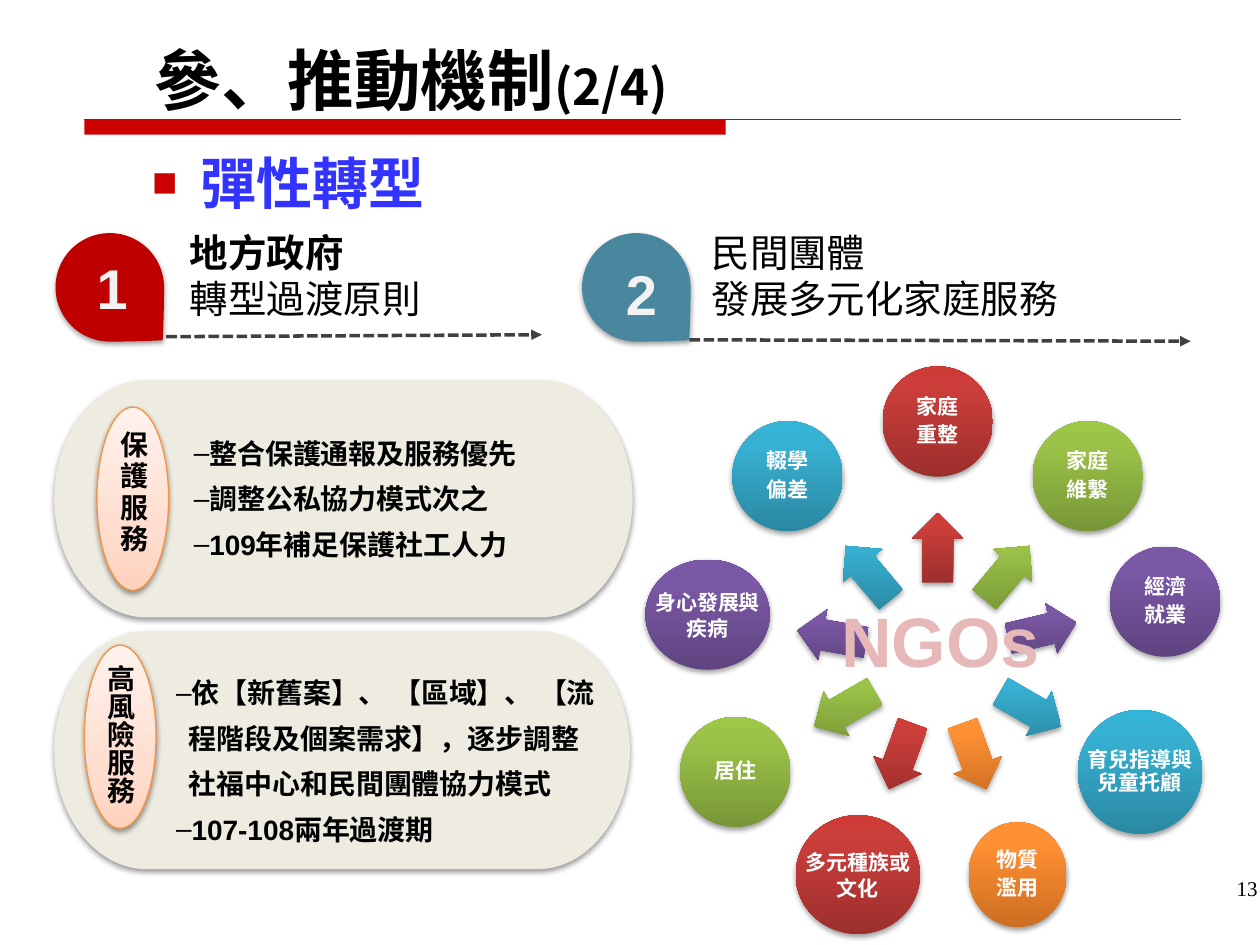
import math

import pptx
import pptx.dml.color
import pptx.enum.dml
import pptx.enum.shapes
import pptx.enum.text
import pptx.oxml
import pptx.oxml.ns
import pptx.util

Pt = pptx.util.Pt
SHAPE = pptx.enum.shapes.MSO_SHAPE
ALIGN = pptx.enum.text.PP_ALIGN
ANCHOR = pptx.enum.text.MSO_ANCHOR
NS = pptx.oxml.ns.nsdecls("a")
CJK = "Noto Sans CJK SC"

RED = ("9C2F2D", "CB3E3A", "CE3B37")
GREEN = ("779737", "9BC348", "9DC746")
PURPLE = ("5F4480", "7B58A6", "7C57A8")
TEAL = ("2A88A2", "37B1D2", "34B4D6")
ORANGE = ("CC6E20", "FF9034", "FF9136")
PEACH = ("FFD2BD", "FFDED0", "FFF2ED")

# angle, gradient, width, height, label lines, line spacing
SERVICES = [
    (270, RED, 63, 63, ["家庭", "重整"], 0.9),
    (310, GREEN, 63, 63, ["家庭", "維繫"], 0.9),
    (346.75, PURPLE, 63, 63, ["經濟", "就業"], 0.9),
    (30, TEAL, 71, 71, ["育兒指導與兒童托顧"], 0.9),
    (70, ORANGE, 56, 60, ["物質", "濫用"], 0.9),
    (110, RED, 71, 68, ["多元種族或文化"], Pt(15)),
    (150, GREEN, 63, 63, ["居住"], 0.9),
    (190, PURPLE, 71, 63, ["身心發展與疾病"], Pt(15)),
    (230, TEAL, 63, 63, ["輟學", "偏差"], 0.9),
]


def rgb(value):
    return pptx.dml.color.RGBColor.from_string(value)


def xml(markup):
    return pptx.oxml.parse_xml(markup.replace(">", f" {NS}>", 1))


def set_all(obj, formats):
    for name, value in formats.items():
        setattr(obj, name, value)


def add_run(p, text, size, color, bold=True, font="Arial"):
    r = p.add_run()
    r.text = text
    set_all(r.font, {"name": font, "size": Pt(size), "bold": bold})
    r.font.color.rgb = rgb(color)
    r.font._element.find(pptx.oxml.ns.qn("a:latin")).addnext(
        xml(f'<a:ea typeface="{CJK}"></a:ea>'))
    return r


def add_bullet(p, char, indent, color="000000", percent=100):
    pPr = p._p.get_or_add_pPr()
    pPr.set("marL", str(Pt(indent)))
    pPr.set("indent", str(-Pt(indent)))
    for markup in (f'<a:buClr><a:srgbClr val="{color}"/></a:buClr>',
                   f'<a:buSzPct val="{percent * 1000}"></a:buSzPct>',
                   '<a:buFont typeface="Arial"></a:buFont>',
                   f'<a:buChar char="{char}"></a:buChar>'):
        pPr.append(xml(markup))


def fill_text(s, lines, size, color="000000", bold=True, font="Arial",
              anchor=ANCHOR.TOP, inset=None, bullet=None, **paragraph):
    tf = s.text_frame
    set_all(tf, {"word_wrap": True, "vertical_anchor": anchor})
    if inset is not None:
        set_all(tf, {f"margin_{side}": Pt(inset)
                     for side in ("left", "top", "right", "bottom")})
    for i, line in enumerate(lines):
        p = tf.add_paragraph() if i else tf.paragraphs[0]
        set_all(p, {"alignment": ALIGN.LEFT, **paragraph})
        if bullet:
            add_bullet(p, *bullet)
        add_run(p, line, size, color, bold, font)
    return tf


def add_text(slide, box, lines, size, **formats):
    s = slide.shapes.add_textbox(*map(Pt, box))
    return fill_text(s, lines, size, **formats)


def add_shape(slide, kind, box, fill, line=None, rotation=0, adjust=(),
              stops=(0, 80, 100), shadow=True):
    """Fill is one colour, or a tuple of gradient colours from the bottom up."""
    s = slide.shapes.add_shape(kind, *map(Pt, box))
    s.rotation = rotation
    for i, value in enumerate(adjust):
        s.adjustments[i] = value
    if isinstance(fill, str):
        s.fill.solid()
        s.fill.fore_color.rgb = rgb(fill)
    else:
        gs = "".join(f'<a:gs pos="{pos * 1000}"><a:srgbClr val="{c}"/></a:gs>'
                     for pos, c in zip(stops, fill))
        s._element.spPr.find(pptx.oxml.ns.qn("a:prstGeom")).addnext(xml(
            f'<a:gradFill rotWithShape="0"><a:gsLst>{gs}</a:gsLst>'
            '<a:lin ang="16200000" scaled="0"/></a:gradFill>'))
    if line:
        s.line.color.rgb = rgb(line)
        s.line.width = Pt(0.75)
    else:
        s.line.fill.background()
    s.shadow.inherit = False
    if shadow:
        s._element.spPr.find(pptx.oxml.ns.qn("a:effectLst")).append(xml(
            '<a:outerShdw blurRad="40000" dist="20000" dir="5400000" '
            'rotWithShape="0"><a:srgbClr val="000000">'
            '<a:alpha val="38000"/></a:srgbClr></a:outerShdw>'))
    return s


def add_line(slide, x1, y1, x2, y2, color, width, arrow=False):
    s = slide.shapes.add_connector(
        pptx.enum.shapes.MSO_CONNECTOR.STRAIGHT, *map(Pt, (x1, y1, x2, y2)))
    s.line.color.rgb = rgb(color)
    s.line.width = Pt(width)
    if arrow:
        s.line.dash_style = pptx.enum.dml.MSO_LINE.SQUARE_DOT
        s.line._get_or_add_ln().append(
            xml('<a:tailEnd type="triangle"></a:tailEnd>'))
    s._element.spPr.append(xml("<a:effectLst></a:effectLst>"))


def add_heading(slide):
    add_shape(slide, SHAPE.RECTANGLE, (48.24, 68.4, 366.5, 8.6), "CC0000",
              shadow=False)
    add_line(slide, 48.24, 68.4, 674.6, 68.4, "CC0000", 0.75)
    tf = add_text(slide, (81.4, 5.8, 612.7, 65.5), ["參、推動機制"], 38,
                  font=CJK, anchor=ANCHOR.BOTTOM)
    add_run(tf.paragraphs[0], "(2/4)", 28, "000000", font=CJK)
    add_text(slide, (79.9, 81.4, 610, 53.3), ["彈性轉型"], 32, color="3333FF",
             bullet=("■", 27.4, "CC0000", 75))


def add_badge(slide, x, color, number, number_at):
    add_shape(slide, SHAPE.TEAR, (x, 133.2, 62, 62), color, rotation=90,
              adjust=[0.975])
    add_text(slide, (*number_at, 50, 46), [number], 32, color="F2F2F2")


def add_panel(slide, box, text_box, lines):
    add_shape(slide, SHAPE.FLOWCHART_TERMINATOR, box, "EEECE1")
    add_text(slide, text_box, lines, 16, line_spacing=Pt(26),
             bullet=("–", 7.2))


def add_oval(slide, x, y):
    return add_shape(slide, SHAPE.OVAL, (x, y, 41, 104.8), PEACH,
                     line="F69240", stops=(0, 35, 100))


def add_service_wheel(slide):
    def around_hub(angle, radius, w, h):
        a = math.radians(angle)
        return (535.8 + radius * math.cos(a) - w / 2,
                374.4 + radius * math.sin(a) - h / 2, w, h)

    for angle, colors, w, h, lines, spacing in SERVICES:
        add_shape(slide, SHAPE.RIGHT_ARROW, around_hub(angle, 61.5, 40, 29.5),
                  colors, rotation=angle, adjust=[0.6, 0.5])
        box = around_hub(angle, 133.5, w, h)
        add_shape(slide, SHAPE.OVAL, box, colors)
        add_text(slide, box, lines, 12, color="FFFFFF", anchor=ANCHOR.MIDDLE,
                 inset=1.5, alignment=ALIGN.CENTER, line_spacing=spacing,
                 space_after=Pt(3.5))
    tf = add_text(slide, (473, 337.7, 128.9, 55.4), ["NGOs"], 40,
                  color="E6B9B8", alignment=ALIGN.CENTER)
    tf.paragraphs[0].runs[0].font._element.insert(0, xml(
        f'<a:ln w="{Pt(1.75)}"><a:solidFill><a:srgbClr val="C0504D"/>'
        '</a:solidFill></a:ln>'))


def main():
    prs = pptx.Presentation()
    set_all(prs, {"slide_width": Pt(720), "slide_height": Pt(540)})
    slide = prs.slides.add_slide(prs.slide_layouts[6])

    add_heading(slide)
    add_badge(slide, 332.6, "48879E", "2", (350.6, 144.7))
    add_badge(slide, 31.7, "BF0000", "1", (48.2, 141.1))
    add_line(slide, 95, 192.4, 309.6, 191.3, "404040", 2, arrow=True)
    add_line(slide, 394, 194.2, 680.4, 195, "404040", 2, arrow=True)
    tf = add_text(slide, (101.5, 127.4, 160, 60.5),
                  ["地方政府", "轉型過渡原則"], 22, bold=False)
    tf.paragraphs[0].runs[0].font.bold = True
    add_text(slide, (399.6, 127.4, 320, 60.5),
             ["民間團體", "發展多元化家庭服務"], 22, bold=False)

    add_panel(slide, (31, 217.4, 330.5, 135.5), (103.7, 239, 256, 85.7),
              ["整合保護通報及服務優先", "調整公私協力模式次之",
               "109年補足保護社工人力"])
    add_oval(slide, 55.4, 232.6)
    add_text(slide, (61.9, 241.9, 30.24, 80), ["保護服務"], 16,
             line_spacing=Pt(18))

    add_panel(slide, (31, 360.7, 329, 136), (93.6, 375.8, 257, 112.3),
              ["依【新舊案】、 【區域】、 【流程階段及個案需求】，"
               "逐步調整社福中心和民間團體協力模式", "107-108兩年過渡期"])
    fill_text(add_oval(slide, 48.2, 368.6), ["高風險服務"], 16, font=CJK,
              anchor=ANCHOR.MIDDLE, alignment=ALIGN.CENTER,
              line_spacing=Pt(16))

    add_service_wheel(slide)
    add_text(slide, (689, 496.8, 36.7, 37.4), ["13"], 12, bold=False,
             font="Times New Roman", alignment=ALIGN.RIGHT)
    prs.save("out.pptx")


if __name__ == "__main__":
    main()
